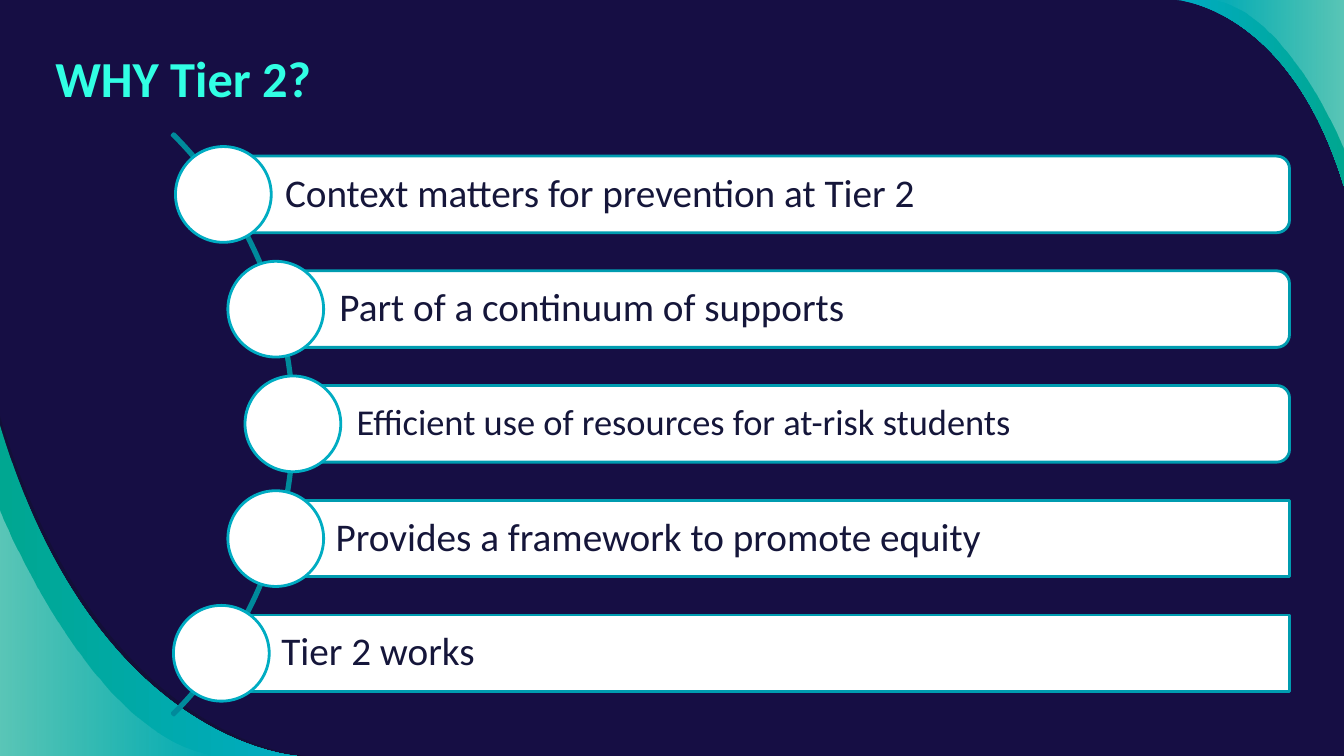
from lxml.etree import SubElement
from pptx import Presentation
from pptx.dml.color import RGBColor
from pptx.enum.shapes import MSO_SHAPE
from pptx.enum.text import MSO_ANCHOR, PP_ALIGN
from pptx.oxml.ns import qn
from pptx.util import Inches, Pt

WIDTH, HEIGHT = 13.33, 7.5
FONT = "Calibri"
ROUND, SQUARE = MSO_SHAPE.ROUNDED_RECTANGLE, MSO_SHAPE.RECTANGLE
REASONS = [
    ("Context matters for prevention at Tier 2", ROUND, 2.19, 1.74, 28),
    ("Part of a continuum of supports", ROUND, 2.73, 2.26, 28),
    ("Efficient use of resources for at-risk students", ROUND, 2.9, 2.43, 26),
    ("Provides a framework to promote equity", SQUARE, 2.73, 2.26, 28),
    ("Tier 2 works", SQUARE, 2.19, 1.72, 28),
]


def color(value):
    """Turn a hex string into a colour."""
    return RGBColor.from_string(value)


def bend_first_side(shape):
    """Turn the first three line segments of an outline into one cubic curve."""
    lines = list(shape._element.spPr.iter(qn("a:lnTo")))[:3]
    curve = lines[0].makeelement(qn("a:cubicBezTo"))
    lines[0].addprevious(curve)
    for line in lines:
        curve.append(line[0])
        line.getparent().remove(line)


def add_wave(page, curve, corner, stops):
    """Fill the area between a curve and a slide corner; stops are (hex, opacity)."""
    start, *others = [tuple(map(Inches, point)) for point in curve + [corner]]
    builder = page.shapes.build_freeform(*start)
    builder.add_line_segments(others, close=True)
    wave = builder.convert_to_shape()
    bend_first_side(wave)
    wave.shadow.inherit = False
    wave.line.fill.background()
    if len(stops) == 1:
        wave.fill.solid()
        wave.fill.fore_color.rgb = color(stops[0][0])
    else:
        wave.fill.gradient()
        wave.fill.gradient_angle = 0
        for stop, (value, _) in zip(wave.fill.gradient_stops, stops):
            stop.color.rgb = color(value)
    tints = wave._element.spPr.iter(qn("a:srgbClr"))
    for tint, (_, opacity) in zip(list(tints), stops):
        if opacity < 100:
            SubElement(tint, qn("a:alpha")).set("val", str(opacity * 1000))


def add_corners(page, width, height):
    """Draw the waves in the lower left and upper right corners."""
    blue, green = ("00ACC2", 100), ("00A791", 100)
    clear, veil = ("FFFFFF", 0), ("FFFFFF", 36)
    low, high = (0, height), (width, 0)
    add_wave(page, [(0, 4.13), (0.98, 7.39), (3.03, height), (3.03, height)],
             low, [("12102F", 54)])
    add_wave(page, [(0, 4.22), (0.95, 7.39), (2.95, height), (2.95, height)],
             low, [green, blue])
    add_wave(page, [(0, 5.06), (0, 5.06), (0.91, 7.35), (2.16, height)],
             low, [veil, clear])
    add_wave(page, [(11.67, 0), (11.67, 0), (12.79, 0.06), (width, 1.85)],
             high, [blue, green])
    add_wave(page, [(12.01, 0), (12.77, 0.09), (width, 1.49), (width, 1.49)],
             high, [clear, veil])


def write(shape, text, size, value, insets, bold=False):
    """Write one left-aligned line into a shape."""
    frame = shape.text_frame
    frame.text = text
    frame.word_wrap = True
    frame.margin_left, frame.margin_top, frame.margin_right, frame.margin_bottom = map(
        Inches, insets)
    para = frame.paragraphs[0]
    para.alignment = PP_ALIGN.LEFT
    font = para.runs[0].font
    font.name, font.size, font.bold = FONT, Pt(size), bold
    font.color.rgb = color(value)
    return para


def add_title(page, left, top, width, height):
    """Place the slide title."""
    box = page.shapes.add_textbox(*map(Inches, (left, top, width, height)))
    box.text_frame.vertical_anchor = MSO_ANCHOR.TOP
    write(box, "WHY Tier 2?", 36, "31FFE4", [0.1] * 4, bold=True)


def add_outlined(page, kind, box, line, fill=None):
    """Add a preset shape with a two-point outline."""
    shape = page.shapes.add_shape(kind, *map(Inches, box))
    shape.shadow.inherit = False
    shape.line.color.rgb = color(line)
    shape.line.width = Pt(2)
    if fill:
        shape.fill.solid()
        shape.fill.fore_color.rgb = color(fill)
    else:
        shape.fill.background()
    return shape


def add_reasons(page, left, top, right, height):
    """Place the arc with one bar and one disc for each reason."""
    pitch = height / len(REASONS)
    bar_height, disc = 0.76, 0.95
    arc = add_outlined(page, MSO_SHAPE.BLOCK_ARC, (left, 0.13, 8.16, 8.16), "008A9B")
    for index, value in enumerate((189, 27, 0.003)):
        arc.adjustments[index] = value
    for row, (text, kind, bar_left, disc_left, size) in enumerate(REASONS):
        middle = top + (row + 0.5) * pitch
        bar = add_outlined(page, kind, (bar_left, middle - bar_height / 2,
                                        right - bar_left, bar_height), "009CB0", "FFFFFF")
        bar.text_frame.vertical_anchor = MSO_ANCHOR.MIDDLE
        para = write(bar, text, size, "15163A", (0.6, 0.08, 0.08, 0.08))
        para.line_spacing = 0.9
        add_outlined(page, MSO_SHAPE.OVAL, (disc_left, middle - disc / 2, disc, disc),
                     "00ACC2", "FFFFFF")


def main():
    """Build the slide and save it."""
    deck = Presentation()
    deck.slide_width, deck.slide_height = Inches(WIDTH), Inches(HEIGHT)
    page = deck.slides.add_slide(deck.slide_layouts[6])
    page.background.fill.solid()
    page.background.fill.fore_color.rgb = color("160E44")
    add_corners(page, WIDTH, HEIGHT)
    add_title(page, 0.45, 0.37, 10.26, 0.92)
    add_reasons(page, -5.24, 1.36, 12.79, 5.69)
    deck.save("out.pptx")


if __name__ == "__main__":
    main()
